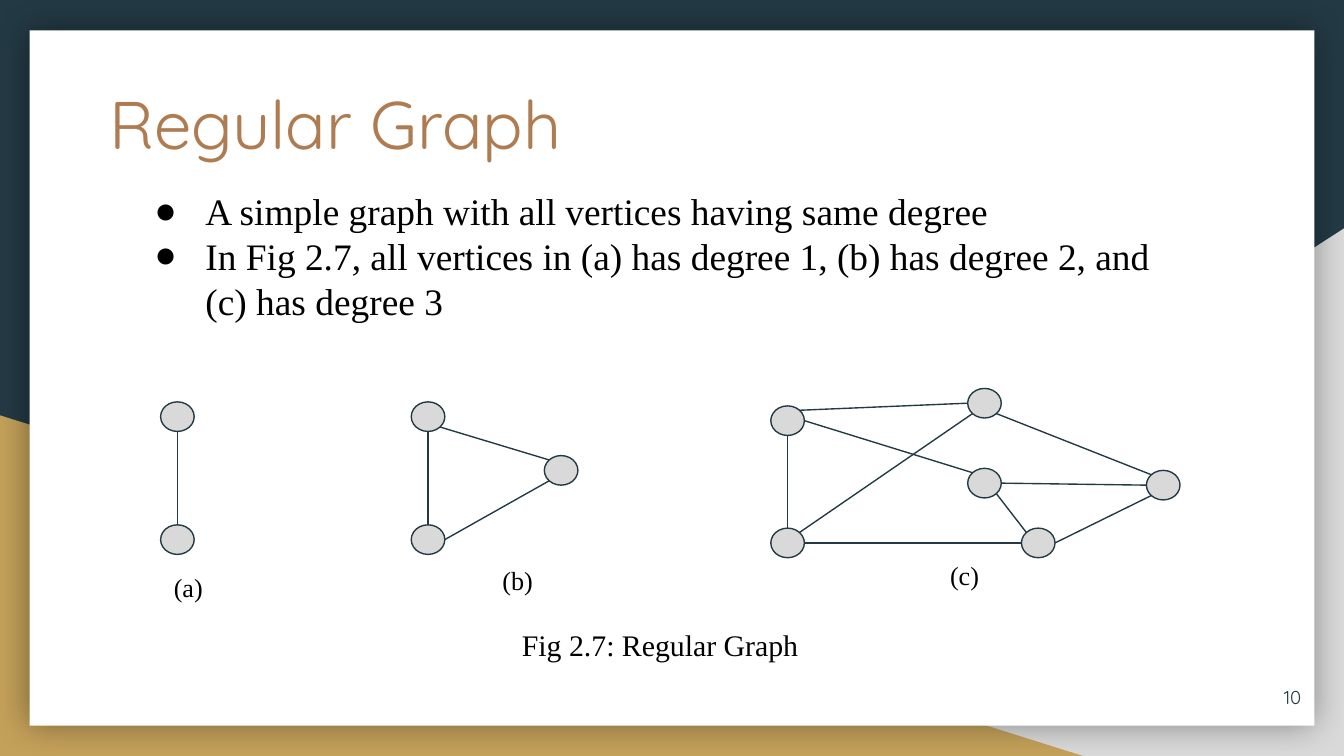
from lxml import etree
from pptx import Presentation
from pptx.dml.color import RGBColor
from pptx.enum.shapes import MSO_CONNECTOR, MSO_SHAPE
from pptx.enum.text import MSO_ANCHOR, PP_ALIGN
from pptx.oxml.ns import qn
from pptx.util import Inches, Pt

NAVY = RGBColor(0x23, 0x3A, 0x44)
GREY = RGBColor(0xD9, 0xD9, 0xD9)
GOLD = RGBColor(0xC4, 0xA1, 0x5A)
BROWN = RGBColor(0xAF, 0x7B, 0x51)
WHITE = RGBColor(0xFF, 0xFF, 0xFF)
BLACK = RGBColor(0, 0, 0)
RECT, OVAL, WEDGE = MSO_SHAPE.RECTANGLE, MSO_SHAPE.OVAL, MSO_SHAPE.RIGHT_TRIANGLE
LINE = MSO_CONNECTOR.STRAIGHT
LEFT, RIGHT = PP_ALIGN.LEFT, PP_ALIGN.RIGHT
TOP, MIDDLE = MSO_ANCHOR.TOP, MSO_ANCHOR.MIDDLE
HEAD, SERIF = "Quicksand", "Times New Roman"

# Grid: 100 columns by 56.25 rows of a tenth of an inch
COLS, ROWS = 100, 56.25
NODE_W, NODE_H = 2.5, 2.2
DIAG = 0.35  # half of the cosine of 45 degrees
SITES = {
    "N": (0, -0.5), "S": (0, 0.5), "W": (-0.5, 0), "E": (0.5, 0),
    "NW": (-DIAG, -DIAG), "NE": (DIAG, -DIAG),
    "SW": (-DIAG, DIAG), "SE": (DIAG, DIAG),
}


def grid(*cells):
    return [Inches(cell / 10) for cell in cells]


class Board:
    def __init__(self, slide):
        self.slide = slide
        self.shapes = slide.shapes

    def shape(self, kind, box, fill, line=None):
        item = self.shapes.add_shape(kind, *grid(*box))
        item.shadow.inherit = False
        item.fill.solid()
        item.fill.fore_color.rgb = fill
        if line is None:
            item.line.fill.background()
        else:
            item.line.color.rgb = line
            item.line.width = Pt(0.75)
        return item

    def glow(self, item):
        """Soft shadow on all sides."""
        effects = item.element.spPr.find(qn("a:effectLst"))
        outer = etree.SubElement(effects, qn("a:outerShdw"), blurRad=str(Pt(18)),
                                 dist="0", dir="0", algn="ctr", rotWithShape="0")
        color = etree.SubElement(outer, qn("a:srgbClr"), val=str(BLACK))
        etree.SubElement(color, qn("a:alpha"), val="40000")

    def text(self, box, lines, size, font=SERIF, color=BLACK,
             align=LEFT, anchor=TOP, bullet=False):
        frame = self.shapes.add_textbox(*grid(*box)).text_frame
        frame.word_wrap = True
        frame.vertical_anchor = anchor
        frame.margin_left = frame.margin_right = Inches(0.1)
        frame.margin_top = frame.margin_bottom = Inches(0.1)
        for i, line in enumerate(lines):
            para = frame.add_paragraph() if i else frame.paragraphs[0]
            para.alignment = align
            if bullet:
                self.bullet(para)
            run = para.add_run()
            run.text = line
            run.font.size = Pt(size)
            run.font.name = font
            run.font.color.rgb = color

    def bullet(self, para):
        props = para._p.get_or_add_pPr()
        props.set("marL", str(Inches(0.53)))
        props.set("indent", str(Inches(-0.38)))
        tint = etree.SubElement(props, qn("a:buClr"))
        etree.SubElement(tint, qn("a:srgbClr"), val=str(BLACK))
        etree.SubElement(props, qn("a:buFont"), typeface=SERIF)
        etree.SubElement(props, qn("a:buChar"), char="●")

    def edge(self, start, end):
        line = self.shapes.add_connector(LINE, *grid(*start, *end))
        line.line.color.rgb = NAVY
        line.line.width = Pt(0.75)
        etree.SubElement(line.element.spPr, qn("a:effectLst"))

    def graph(self, nodes, edges):
        """Draw named nodes and join them at compass sites."""
        for x, y in nodes.values():
            self.shape(OVAL, (x, y, NODE_W, NODE_H), GREY, NAVY)

        def point(name, side):
            (x, y), (dx, dy) = nodes[name], SITES[side]
            return x + NODE_W * (0.5 + dx), y + NODE_H * (0.5 + dy)

        for edge in edges:
            a, out, b, into = edge.split()
            self.edge(point(a, out), point(b, into))


def main():
    deck = Presentation()
    deck.slide_width, deck.slide_height = grid(COLS, ROWS)
    slide = deck.slides.add_slide(deck.slide_layouts[6])
    board = Board(slide)

    # Backdrop and page
    slide.background.fill.solid()
    slide.background.fill.fore_color.rgb = NAVY
    wedge = board.shape(WEDGE, (39.2, 17, 60.8, 39.25), GREY)
    wedge.element.spPr.xfrm.set("flipH", "1")
    board.shape(WEDGE, (0, 30.9, 80.6, 25.35), GOLD)
    board.glow(board.shape(RECT, (2.2, 2.25, 95.6, 51.75), WHITE))

    # Title, points and page number
    board.text((7.15, 5.1, 55.9, 7.1), ["Regular Graph"], 36, HEAD, BROWN)
    board.text((9, 13, 79.8, 12.1), [
        "A simple graph with all vertices having same degree",
        "In Fig 2.7, all vertices in (a) has degree 1, (b) has degree 2, "
        "and (c) has degree 3",
    ], 20, bullet=True)
    board.text((91.8, 49.75, 6, 4.3), ["10"], 10, HEAD, NAVY, RIGHT, MIDDLE)

    # Graph (a): degree 1
    board.graph({"top": (11.95, 29.9), "low": (11.95, 39.05)}, ["top S low N"])

    # Graph (b): degree 2
    board.graph(
        {"top": (30.6, 29.9), "low": (30.6, 39.05), "tip": (40.5, 33.9)},
        ["top S low N", "top SE tip NW", "low E tip SW"])

    # Graph (c): degree 3
    board.graph(
        {"left": (57.35, 30.2), "low": (57.35, 39.3), "top": (72, 28.9),
         "mid": (72, 34.85), "base": (76, 39.3), "tip": (85.3, 35)},
        ["left S low N", "left NE top W", "left E mid NW",
         "low NE top SW", "low E base W", "top SE tip NW",
         "mid E tip W", "mid SE base NW", "base E tip SW"])

    # Labels and caption
    for name, x, y in (("(a)", 11.95, 41.5), ("(b)", 36.4, 41), ("(c)", 69.7, 40.6)):
        board.text((x, y, 4.8, 3.5), [name], 14)
    board.text((37.85, 45.65, 25.2, 3.5), ["Fig 2.7: Regular Graph"], 16)

    deck.save("out.pptx")


if __name__ == "__main__":
    main()
